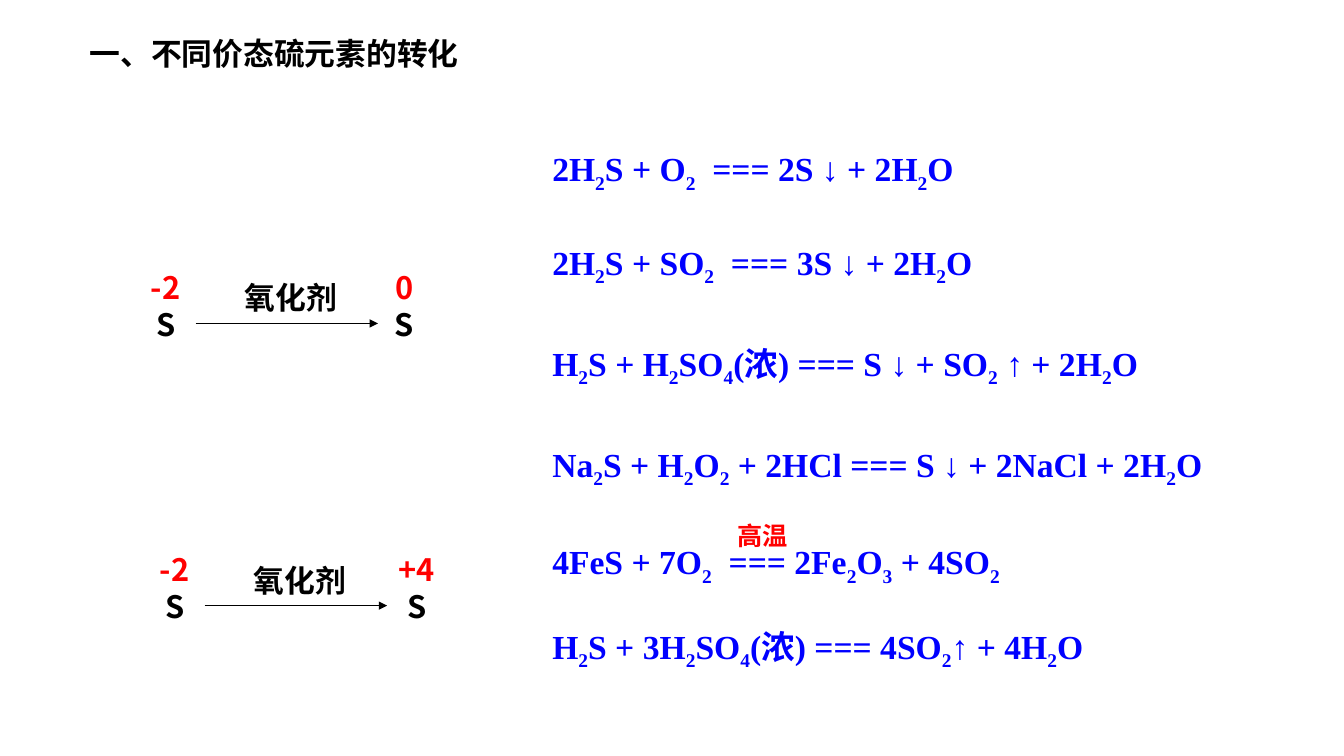
from lxml import etree
from pptx import Presentation
from pptx.dml.color import RGBColor
from pptx.enum.shapes import MSO_CONNECTOR
from pptx.enum.text import MSO_AUTO_SIZE, PP_ALIGN
from pptx.oxml.ns import qn
from pptx.util import Pt

STRAIGHT = MSO_CONNECTOR.STRAIGHT
FIT = MSO_AUTO_SIZE.SHAPE_TO_FIT_TEXT
LEFT, CENTER = PP_ALIGN.LEFT, PP_ALIGN.CENTER
COLORS = {"black": "000000", "red": "FF0000", "blue": "0000FF"}
CJK, LATIN, SERIF = "Noto Sans CJK SC", "Arial", "Times New Roman"

prs = Presentation()
prs.slide_width, prs.slide_height = Pt(960), Pt(540)
slide = prs.slides.add_slide(prs.slide_layouts[6])


def style(run, size, font, color):
    run.font.size, run.font.name, run.font.bold = Pt(size), font, True
    run.font.color.rgb = RGBColor.from_string(COLORS[color])
    east_asian = etree.SubElement(run.font._element, qn("a:ea"))
    east_asian.set("typeface", CJK)


def add_text(box, lines, size, font, colors, align=LEFT, wrap=True):
    """Write one paragraph per line; "_" lowers the character after it."""
    frame = slide.shapes.add_textbox(*[Pt(v) for v in box]).text_frame
    frame.word_wrap, frame.auto_size = wrap, FIT
    frame.text = "\n".join([""] * len(lines))
    for paragraph, line, color in zip(frame.paragraphs, lines, colors):
        paragraph.alignment = align
        start, *rest = line.split("_")
        pieces = [(start, False)]
        for part in rest:
            pieces += [(part[0], True), (part[1:], False)]
        for piece, lowered in pieces:
            if piece:
                run = paragraph.add_run()
                run.text = piece
                style(run, size, font, color)
                if lowered:
                    run.font._element.set("baseline", "-25000")


# Title
add_text((56.9, 21.6, 281, 34), ["一、不同价态硫元素的转化"], 22, LATIN, ["black"], wrap=False)

# Valence changes: left, top, offset of the product, valence of the product
for left, top, product_dx, valence in [(94.3, 188.6, 170.4, "0"), (100.8, 390.2, 173, "+4")]:
    for dx, number in [(0, "-2"), (product_dx, valence)]:
        add_text((left + dx, top, 48, 60.5), [number, "S"], 22, CJK, ["red", "black"], CENTER)
    add_text((left + 73.5, top + 7.2, 82, 34), ["氧化剂"], 22, LATIN, ["black"])

    arrow_y = Pt(top + 42.4)
    arrow = slide.shapes.add_connector(STRAIGHT, Pt(left + 45.4), arrow_y, Pt(left + 175.7), arrow_y)
    arrow.line.width = Pt(0.5)
    arrow.line.color.rgb = RGBColor.from_string(COLORS["black"])
    etree.SubElement(arrow.line._get_or_add_ln(), qn("a:tailEnd")).set("type", "triangle")
    etree.SubElement(arrow._element.spPr, qn("a:effectLst"))

# Equations: top, width, text
equations = [
    (102.2, 315.4, "2H_2S + O_2  === 2S ↓ + 2H_2O"),
    (169.2, 342, "2H_2S + SO_2  === 3S ↓ + 2H_2O"),
    (241.2, 490.3, "H_2S + H_2SO_4(浓) === S ↓ + SO_2 ↑ + 2H_2O"),
    (313.2, 520.6, "Na_2S + H_2O_2 + 2HCl === S ↓ + 2NaCl + 2H_2O"),
    (383, 375.8, "4FeS + 7O_2  === 2Fe_2O_3 + 4SO_2"),
    (443.5, 421.9, "H_2S + 3H_2SO_4(浓) === 4SO_2↑ + 4H_2O"),
]
for top, width, equation in equations:
    add_text((387.4, top, width, 36), [equation], 24, SERIF, ["blue"])

# Reaction condition above the fifth equation
add_text((519.8, 367.9, 50.4, 28.8), ["高温"], 18, SERIF, ["red"])

prs.save("out.pptx")
